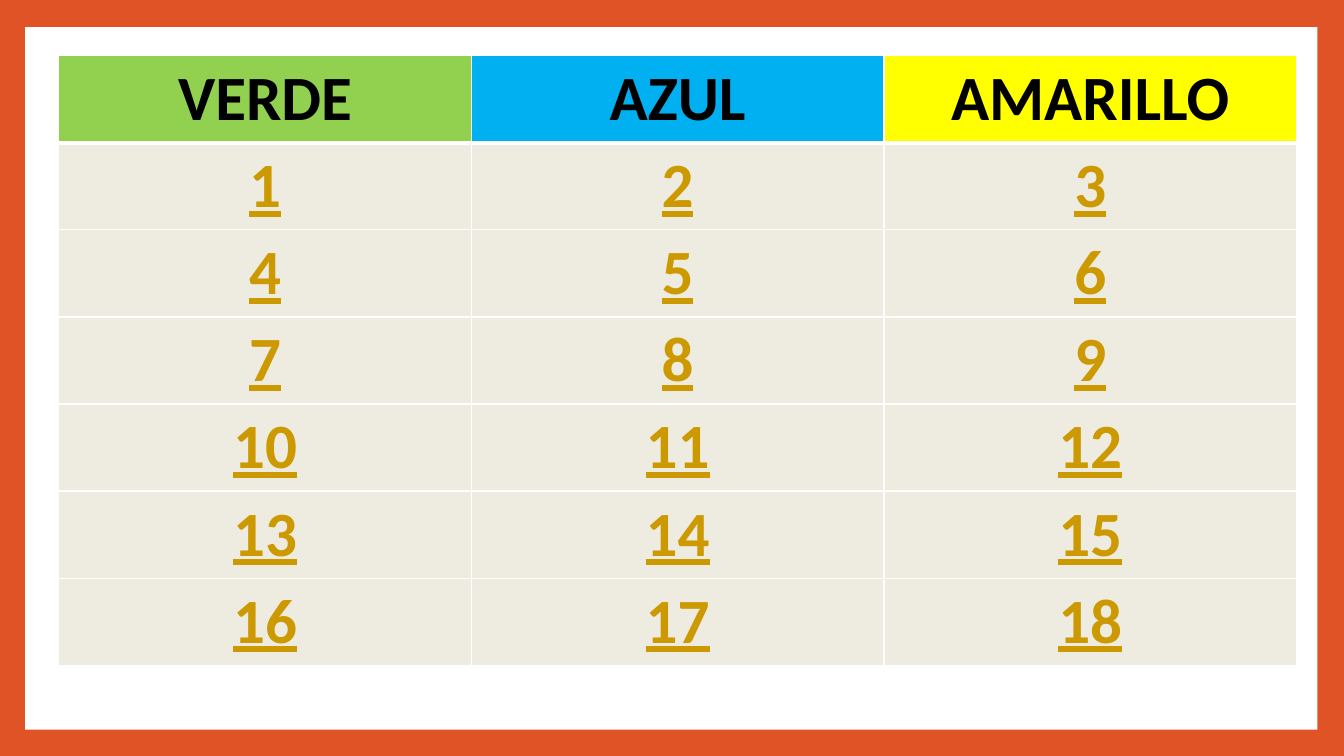
from dataclasses import dataclass

from lxml.etree import SubElement
from pptx import Presentation
from pptx.dml.color import RGBColor
from pptx.enum.shapes import MSO_SHAPE
from pptx.enum.text import PP_ALIGN
from pptx.oxml.ns import qn
from pptx.slide import Slide
from pptx.table import Table, _Cell
from pptx.util import Pt

COLORS = {
    "frame": "DF5327",
    "panel": "FFFFFF",
    "border": "FFFFFF",
    "body": "EEECE1",
    "heading": "000000",
    "number": "CC9900",
    "green": "92D050",
    "blue": "00B0F0",
    "yellow": "FFFF00",
}
NUMBER_ROWS = 6
COLUMN_WIDTH = 294.7
ROW_HEIGHT = 61.2
THIN, THICK = 1, 3


@dataclass
class Heading:
    text: str
    fill: str


HEADINGS = [
    Heading("VERDE", "green"),
    Heading("AZUL", "blue"),
    Heading("AMARILLO", "yellow"),
]


def color(name: str) -> RGBColor:
    return RGBColor.from_string(COLORS[name])


def set_borders(cell: _Cell, top: float, bottom: float) -> None:
    properties = cell._tc.get_or_add_tcPr()
    widths = {"a:lnL": THIN, "a:lnR": THIN, "a:lnT": top, "a:lnB": bottom}
    for tag, width in widths.items():
        line = SubElement(properties, qn(tag), w=str(Pt(width)))
        fill = SubElement(line, qn("a:solidFill"))
        SubElement(fill, qn("a:srgbClr"), val=COLORS["border"])


def write_cell(cell: _Cell, text: str, fill: str, ink: str, underline: bool) -> None:
    cell.fill.solid()
    cell.fill.fore_color.rgb = color(fill)
    para = cell.text_frame.paragraphs[0]
    para.alignment = PP_ALIGN.CENTER
    span = para.add_run()
    span.text = text
    span.font.name = "Calibri"
    span.font.size = Pt(45)
    span.font.bold = True
    span.font.underline = underline
    span.font.color.rgb = color(ink)


def add_panel(page: Slide) -> None:
    panel = page.shapes.add_shape(
        MSO_SHAPE.RECTANGLE, Pt(18), Pt(19.4), Pt(923), Pt(501.8)
    )
    panel.shadow.inherit = False
    panel.fill.solid()
    panel.fill.fore_color.rgb = color("panel")
    panel.line.fill.background()


def add_number_table(page: Slide) -> Table:
    rows, columns = NUMBER_ROWS + 1, len(HEADINGS)
    table = page.shapes.add_table(
        rows, columns, Pt(42), Pt(39.8),
        Pt(COLUMN_WIDTH * columns), Pt(ROW_HEIGHT * rows),
    ).table
    for column in table.columns:
        column.width = Pt(COLUMN_WIDTH)
    for row in table.rows:
        row.height = Pt(ROW_HEIGHT)

    # Headings, with a thick rule below
    for index, heading in enumerate(HEADINGS):
        cell = table.cell(0, index)
        set_borders(cell, THIN, THICK)
        write_cell(cell, heading.text, heading.fill, "heading", False)

    # Numbers, counted row by row
    for number in range(NUMBER_ROWS * columns):
        row_index, column_index = divmod(number, columns)
        cell = table.cell(row_index + 1, column_index)
        set_borders(cell, THICK if row_index == 0 else THIN, THIN)
        write_cell(cell, str(number + 1), "body", "number", True)
    return table


def main() -> None:
    deck = Presentation()
    deck.slide_width, deck.slide_height = Pt(960), Pt(540)
    page = deck.slides.add_slide(deck.slide_layouts[6])

    # Orange frame around a white panel
    page.background.fill.solid()
    page.background.fill.fore_color.rgb = color("frame")
    add_panel(page)

    add_number_table(page)
    deck.save("out.pptx")


if __name__ == "__main__":
    main()
